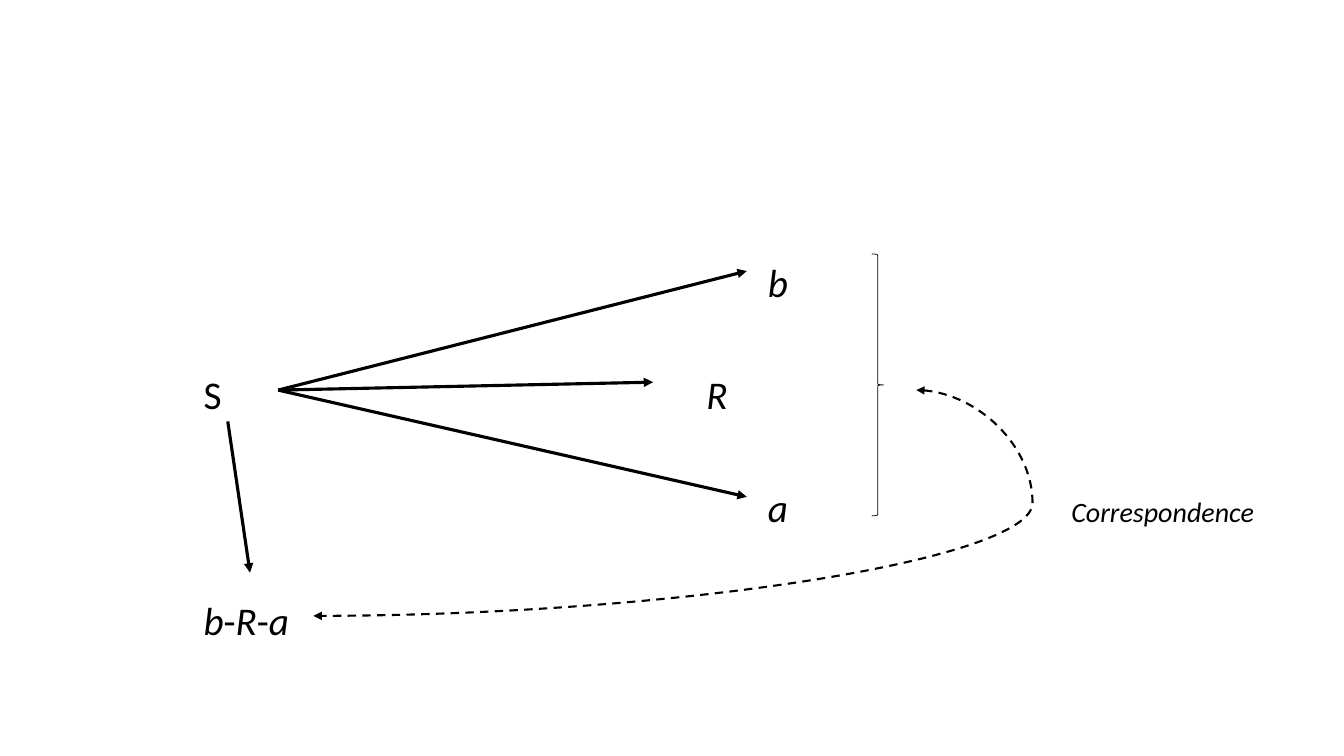
from dataclasses import dataclass

from lxml.etree import SubElement
from pptx import Presentation
from pptx.dml.color import RGBColor
from pptx.enum.dml import MSO_LINE_DASH_STYLE as Dash
from pptx.enum.shapes import MSO_CONNECTOR as Connector, MSO_SHAPE as Shape
from pptx.oxml.ns import qn
from pptx.util import Cm, Pt

COLORS = {"ink": "000000"}
INK = RGBColor.from_string(COLORS["ink"])
FIRST_ROW, ROW_STEP = 6.5, 2.84
SUBJECT = (7.01, 9.83)


@dataclass(frozen=True)
class Label:
    runs: tuple[str, ...]
    left: float
    row: int
    width: float = 1.0
    size: int = 28
    drop: float = 0.0


@dataclass(frozen=True)
class Arrow:
    start: tuple[float, float]
    end: tuple[float, float]


LABELS = (
    Label(("b",), 19.35, 0),
    Label(("S",), 5.13, 1),
    Label(("R",), 17.8, 1),
    Label(("a",), 19.35, 2),
    Label(("Correspondence",), 27.0, 2, width=5.2, size=20, drop=0.27),
    Label(("b", "-", "R", "-", "a"), 5.13, 3, width=2.6),
)
ARROWS = (
    Arrow(SUBJECT, (18.82, 6.83)),
    Arrow(SUBJECT, (16.46, 9.63)),
    Arrow(SUBJECT, (18.82, 12.52)),
    Arrow((5.74, 10.62), (6.3, 14.43)),
)
CORRESPONDENCE = Arrow((23.09, 9.83), (7.9, 15.52))
UPRIGHT = ("S", "-")


def add_label(slide, label: Label) -> None:
    top = FIRST_ROW + label.row * ROW_STEP + label.drop
    box = slide.shapes.add_textbox(Cm(label.left), Cm(top), Cm(label.width), Cm(1.2))
    frame = box.text_frame
    frame_format = {"margin_left": 0, "margin_right": 0, "margin_top": 0,
                    "margin_bottom": 0, "word_wrap": True}
    for name, value in frame_format.items():
        setattr(frame, name, value)
    for text in label.runs:
        run = frame.paragraphs[0].add_run()
        run.text = text
        font_format = {"name": "Calibri", "size": Pt(label.size),
                       "italic": text not in UPRIGHT}
        for name, value in font_format.items():
            setattr(run.font, name, value)
        run.font.color.rgb = INK


def add_arrow(slide, arrow: Arrow, kind: Connector = Connector.STRAIGHT,
              width: float = 2.25, heads: tuple[str, ...] = ("tailEnd",)):
    """Draw a connector with a triangle at each of the named ends."""
    points = [Cm(value) for value in arrow.start + arrow.end]
    connector = slide.shapes.add_connector(kind, *points)
    connector.line.width = Pt(width)
    connector.line.color.rgb = INK
    line = connector.line._get_or_add_ln()
    for head in heads:
        SubElement(line, qn(f"a:{head}"), type="triangle")
    SubElement(connector._element.spPr, qn("a:effectLst"))
    return connector


def add_correspondence(slide) -> None:
    """Draw the dashed curve, which bulges to the right of its start."""
    curve = add_arrow(slide, CORRESPONDENCE, Connector.CURVE, 1.5,
                      ("headEnd", "tailEnd"))
    curve.line.dash_style = Dash.DASH
    properties = curve._element.spPr
    transform = properties.find(qn("a:xfrm"))
    del transform.attrib["flipH"]
    transform.set("rot", "10800000")
    transform.set("flipV", "1")
    adjustments = properties.find(qn("a:prstGeom")).find(qn("a:avLst"))
    SubElement(adjustments, qn("a:gd"), name="adj1", fmla="val -19300")


def add_brace(slide) -> None:
    brace = slide.shapes.add_shape(Shape.RIGHT_BRACE, Cm(21.97), Cm(6.4), Cm(0.3), Cm(6.6))
    brace.shadow.inherit = False
    brace.fill.background()
    brace.line.width = Pt(0.5)
    brace.line.color.rgb = INK


def main() -> None:
    presentation = Presentation()
    presentation.slide_width, presentation.slide_height = Cm(33.87), Cm(19.05)
    slide = presentation.slides.add_slide(presentation.slide_layouts[6])
    for label in LABELS:
        add_label(slide, label)
    for arrow in ARROWS:
        add_arrow(slide, arrow)
    add_brace(slide)
    add_correspondence(slide)
    presentation.save("out.pptx")


if __name__ == "__main__":
    main()
